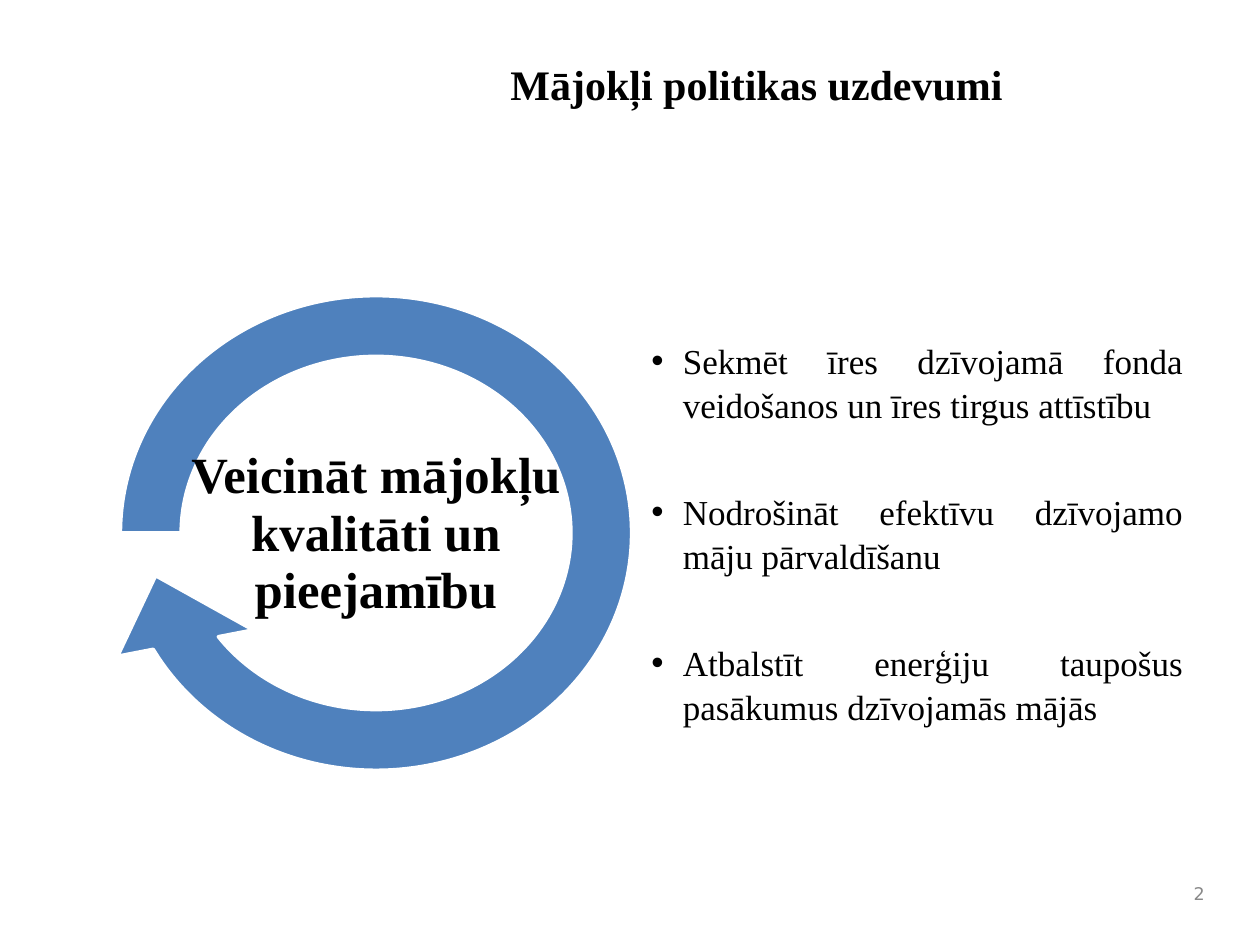
from lxml.etree import SubElement
from pptx import Presentation
from pptx.dml.color import RGBColor
from pptx.enum.shapes import MSO_SHAPE as Shape
from pptx.enum.text import MSO_ANCHOR as Anchor, PP_ALIGN as Align
from pptx.oxml.ns import qn
from pptx.util import Inches, Pt

WIDTH, HEIGHT = Inches(10), Inches(7.5)
TASKS = [
    "Sekmēt īres dzīvojamā fonda veidošanos un īres tirgus attīstību",
    "Nodrošināt efektīvu dzīvojamo māju pārvaldīšanu",
    "Atbalstīt enerģiju taupošus pasākumus dzīvojamās mājās",
]


def color(value):
    return RGBColor.from_string(value)


def add_bullet(paragraph, indent):
    properties = paragraph._p.get_or_add_pPr()
    properties.set("marL", str(Inches(indent)))
    properties.set("indent", str(-Inches(indent)))
    SubElement(properties, qn("a:buFont"), typeface="Arial")
    SubElement(properties, qn("a:buChar"), char="•")


def write(paragraph, text, size, font="Times New Roman", fill="000000",
          bold=False, align=Align.CENTER, spacing=None, before=0, indent=None):
    paragraph.alignment = align
    if spacing:
        paragraph.line_spacing = spacing
    if before:
        paragraph.space_before = Pt(before)
    if indent:
        add_bullet(paragraph, indent)
    run = paragraph.add_run()
    run.text = text
    run.font.name = font
    run.font.size = Pt(size)
    run.font.bold = bold
    run.font.color.rgb = color(fill)


class SlideBuilder:
    accent = "4F81BD"
    outline = "FFFFFF"

    def __init__(self, slide):
        self.slide = slide

    def place(self, left, top, width, height):
        return (round(left * WIDTH), round(top * HEIGHT),
                round(width * WIDTH), round(height * HEIGHT))

    def text(self, area, lines, anchor=Anchor.MIDDLE, inset=(0.1, 0.05),
             gap=0, **style):
        frame = self.slide.shapes.add_textbox(*self.place(*area)).text_frame
        frame.word_wrap = True
        frame.vertical_anchor = anchor
        frame.margin_left = frame.margin_right = Inches(inset[0])
        frame.margin_top = frame.margin_bottom = Inches(inset[1])
        for index, line in enumerate(lines):
            paragraph = frame.add_paragraph() if index else frame.paragraphs[0]
            write(paragraph, line, before=gap if index else 0, **style)

    def cycle_arrow(self, area, adjustments):
        shape = self.slide.shapes.add_shape(Shape.CIRCULAR_ARROW, *self.place(*area))
        shape.shadow.inherit = False
        shape.fill.solid()
        shape.fill.fore_color.rgb = color(self.accent)
        shape.line.color.rgb = color(self.outline)
        shape.line.width = Pt(2)
        for index, value in enumerate(adjustments):
            shape.adjustments[index] = value


def main():
    presentation = Presentation()
    presentation.slide_width, presentation.slide_height = WIDTH, HEIGHT
    builder = SlideBuilder(presentation.slides.add_slide(presentation.slide_layouts[6]))
    builder.text((0.267, 0.055, 0.667, 0.15), ["Mājokļi politikas uzdevumi"],
                 anchor=Anchor.TOP, size=24, bold=True)
    builder.cycle_arrow((0.065, 0.272, 0.467, 0.584), (0.11, 11.42, 90, 108, 0.125))
    builder.text((0.516, 0.28, 0.424, 0.567), TASKS, inset=(0.01, 0.01), gap=36,
                 size=20, align=Align.JUSTIFY, spacing=1.05, indent=0.25)
    builder.text((0.149, 0.465, 0.299, 0.2), ["Veicināt mājokļu kvalitāti un pieejamību"],
                 inset=(0.02, 0.02), size=29, bold=True, spacing=0.94)
    builder.text((0.933, 0.924, 0.033, 0.044), ["2"], size=10, font="DejaVu Sans",
                 fill="898989", align=Align.RIGHT)
    presentation.save("out.pptx")


if __name__ == "__main__":
    main()
